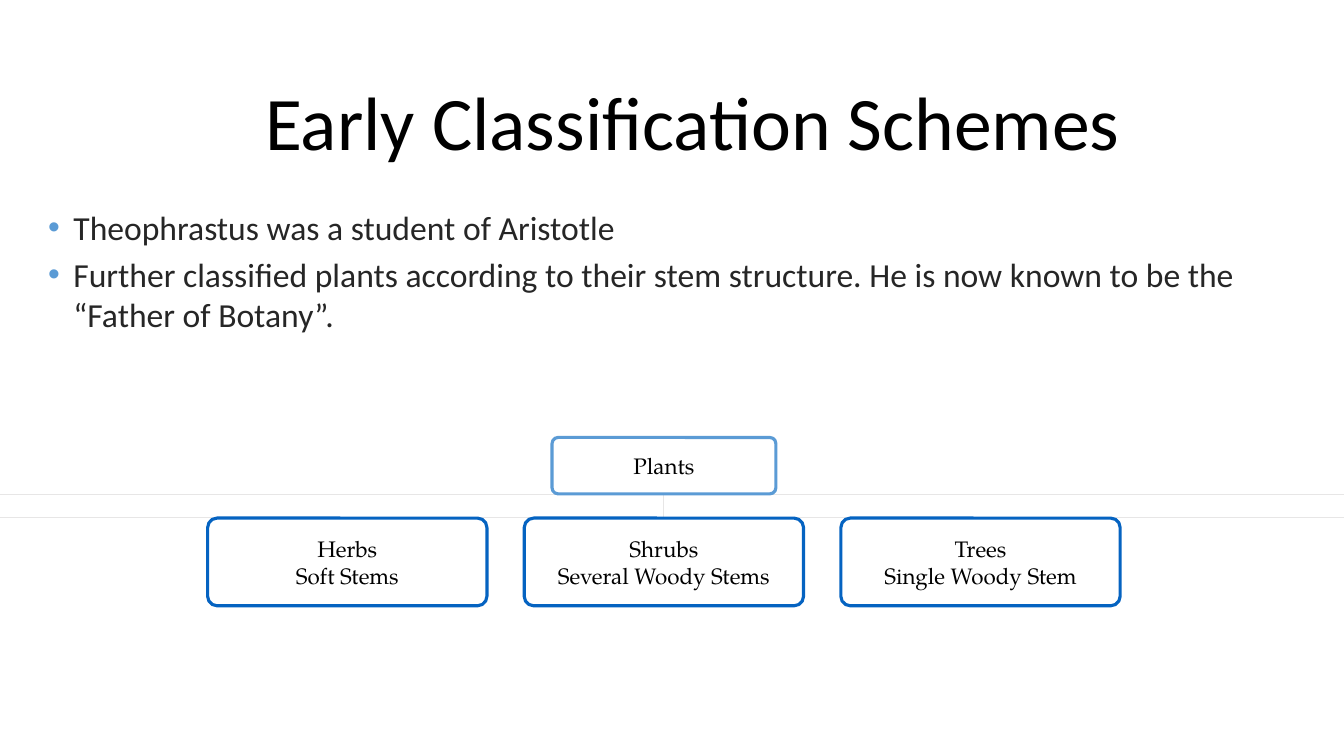
from lxml.etree import SubElement
from pptx import Presentation
from pptx.dml.color import RGBColor
from pptx.enum.shapes import MSO_CONNECTOR, MSO_SHAPE
from pptx.enum.text import MSO_ANCHOR, PP_ALIGN
from pptx.oxml.ns import qn
from pptx.util import Emu, Inches, Pt

TITLE = "Early Classification Schemes"
POINTS = [
    "Theophrastus was a student of Aristotle",
    "Further classified plants according to their stem structure. "
    "He is now known to be the “Father of Botany”.",
]
ROOT = ["Plants"]
GROUPS = [
    ["Herbs", "Soft Stems"],
    ["Shrubs", "Several Woody Stems"],
    ["Trees", "Single Woody Stem"],
]
ELBOW_REACH = 1225400


def color(value):
    return RGBColor.from_string(value)


def place(shape, box):
    shape.left, shape.top, shape.width, shape.height = map(Inches, box)


def add_run(paragraph, text, font_name, size, text_color):
    run = paragraph.add_run()
    run.text = text
    run.font.name = font_name
    run.font.size = Pt(size)
    run.font.color.rgb = color(text_color)


def add_bullet(paragraph, bullet_color):
    properties = paragraph._p.get_or_add_pPr()
    properties.set("marL", str(Inches(0.25)))
    properties.set("indent", str(-Inches(0.25)))
    shade = SubElement(properties, qn("a:buClr"))
    SubElement(shade, qn("a:srgbClr"), val=bullet_color)
    SubElement(properties, qn("a:buFont"), typeface="Arial")
    SubElement(properties, qn("a:buChar"), char="•")


def add_title(slide, box):
    title = slide.shapes.title
    place(title, box)
    frame = title.text_frame
    frame.word_wrap = True
    frame.vertical_anchor = MSO_ANCHOR.MIDDLE
    paragraph = frame.paragraphs[0]
    paragraph.alignment = PP_ALIGN.CENTER
    add_run(paragraph, TITLE, "Calibri", 54, "000000")


def add_points(slide, box):
    frame = slide.shapes.add_textbox(*map(Inches, box)).text_frame
    frame.word_wrap = True
    for index, text in enumerate(POINTS):
        paragraph = frame.add_paragraph() if index else frame.paragraphs[0]
        if index:
            paragraph.space_before = Pt(4.8)
        add_bullet(paragraph, "5B9BD5")
        add_run(paragraph, text, "Calibri", 24, "262626")


def add_node(slide, box, lines, line_color):
    node = slide.shapes.add_shape(MSO_SHAPE.ROUNDED_RECTANGLE, *map(Inches, box))
    node.adjustments[0] = 0.108
    node.shadow.inherit = False
    node.fill.background()
    node.line.color.rgb = color(line_color)
    node.line.width = Pt(2.25)
    frame = node.text_frame
    frame.word_wrap = True
    frame.vertical_anchor = MSO_ANCHOR.MIDDLE
    frame.margin_left = frame.margin_right = Inches(0.09)
    frame.margin_top = frame.margin_bottom = Inches(0.04)
    for index, text in enumerate(lines):
        paragraph = frame.add_paragraph() if index else frame.paragraphs[0]
        paragraph.alignment = PP_ALIGN.CENTER
        add_run(paragraph, text, "TeX Gyre Pagella", 16, "000000")


def add_branch(slide, start, end):
    straight = start[0] == end[0]
    kind = MSO_CONNECTOR.STRAIGHT if straight else MSO_CONNECTOR.ELBOW
    branch = slide.shapes.add_connector(kind, *map(Inches, start + end))
    branch.line.color.rgb = color("E7E6E6")
    branch.line.width = Pt(0.75)
    properties = branch._element.spPr
    SubElement(properties, qn("a:effectLst"))
    if not straight:
        guides = properties.find(qn("a:prstGeom")).get_or_add_avLst()
        SubElement(guides, qn("a:gd"), name="adj1", fmla=f"val {ELBOW_REACH}")


def add_tree(slide, box):
    left, top, width, height = box
    root_width, root_height = 2.22, 0.56
    group_width, group_height = 2.77, 0.87
    pitch = (width - group_width) / (len(GROUPS) - 1)
    center = left + width / 2
    group_top = top + height - group_height
    group_lefts = [left + column * pitch for column in range(len(GROUPS))]
    root_bottom = top + root_height + 0.01

    for group_left in reversed(group_lefts):
        middle = round(group_left + group_width / 2, 3)
        add_branch(slide, (middle, group_top - 0.01), (round(center, 3), root_bottom))
    add_node(slide, (center - root_width / 2, top, root_width, root_height), ROOT, "5B9BD5")
    for group_left, lines in zip(group_lefts, GROUPS):
        add_node(slide, (group_left, group_top, group_width, group_height), lines, "0563C1")


def main():
    presentation = Presentation()
    presentation.slide_width = Inches(13.33)
    presentation.slide_height = Inches(7.5)
    slide = presentation.slides.add_slide(presentation.slide_layouts[5])
    add_title(slide, (0.85, 0.62, 12.04, 1.15))
    add_points(slide, (0.38, 2, 12.76, 4.81))
    add_tree(slide, (2.06, 4.34, 9.05, 1.67))
    presentation.save("out.pptx")


if __name__ == "__main__":
    main()
